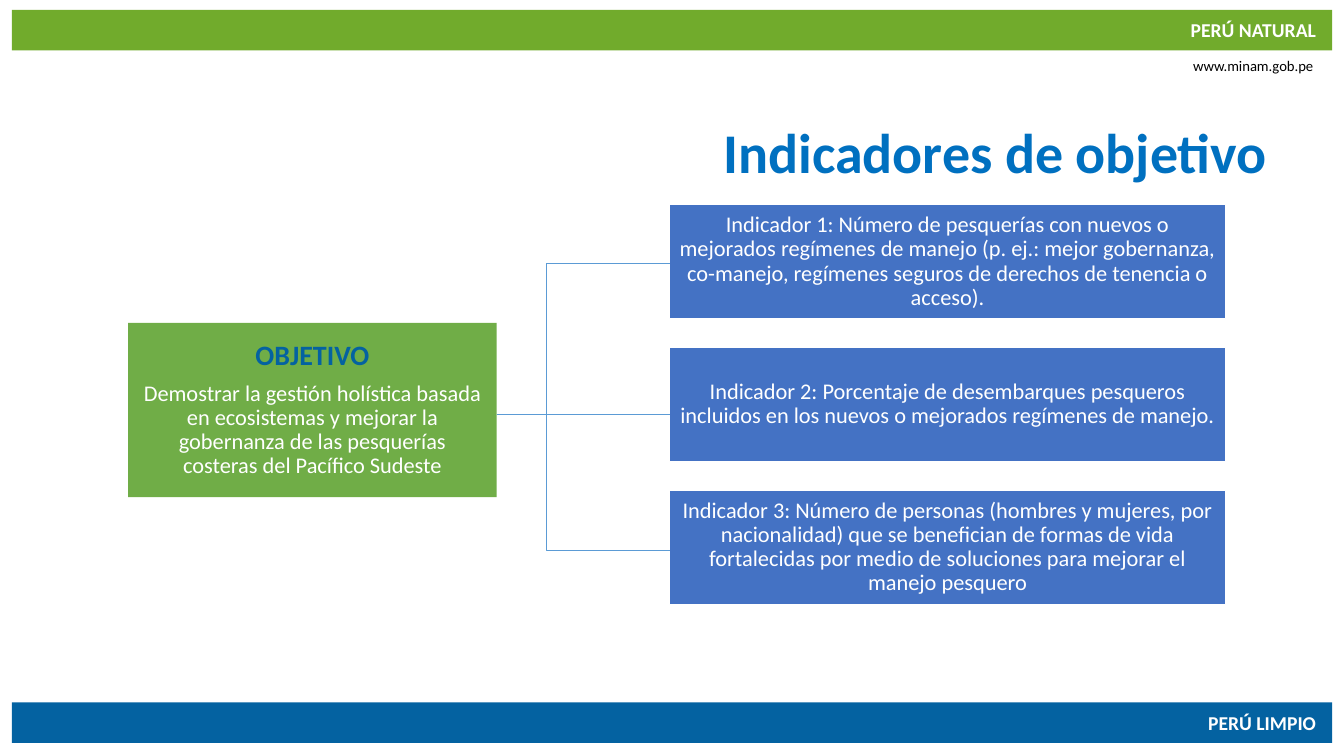
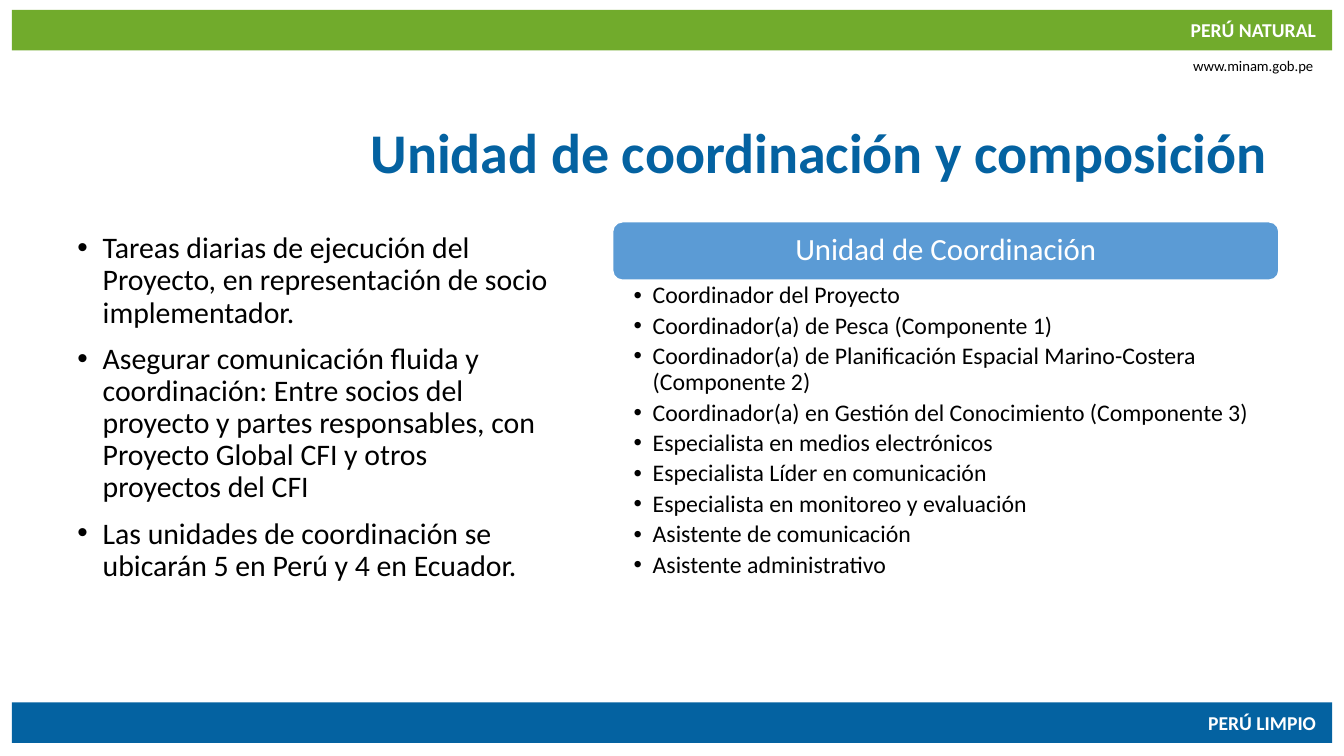
from dataclasses import dataclass
from typing import Optional

from lxml.etree import SubElement
from pptx import Presentation
from pptx.dml.color import RGBColor
from pptx.enum.shapes import MSO_CONNECTOR as Link, MSO_SHAPE as Preset
from pptx.enum.text import MSO_ANCHOR as Anchor, MSO_AUTO_SIZE as AutoSize, PP_ALIGN as Align
from pptx.oxml.ns import qn
from pptx.shapes.autoshape import Shape
from pptx.slide import Slide, SlideLayout
from pptx.text.text import TextFrame
from pptx.util import Cm, Pt

WHITE = RGBColor(0xFF, 0xFF, 0xFF)
BLACK = RGBColor(0x00, 0x00, 0x00)
BAND_GREEN = RGBColor(0x71, 0xAB, 0x2C)
BAND_BLUE = RGBColor(0x04, 0x62, 0xA1)
TITLE_BLUE = RGBColor(0x00, 0x70, 0xC0)
GOAL_GREEN = RGBColor(0x70, 0xAD, 0x47)
INDICATOR_BLUE = RGBColor(0x44, 0x72, 0xC4)
LIGHT_BLUE = RGBColor(0x5B, 0x9B, 0xD5)
FONT = "Calibri"
TITLE_ONLY = 5


@dataclass(frozen=True)
class Box:
    """Left, top, width and height in centimetres."""
    left: float
    top: float
    width: float
    height: float

    def lengths(self) -> tuple[Cm, Cm, Cm, Cm]:
        return Cm(self.left), Cm(self.top), Cm(self.width), Cm(self.height)


@dataclass(frozen=True)
class Style:
    size: float
    color: RGBColor = WHITE
    bold: bool = False
    align: Align = Align.CENTER
    line_spacing: float = 0.9
    gap: float = 0  # points between paragraphs
    bullet_indent: float = 0  # centimetres


@dataclass(frozen=True)
class Band:
    label: str
    top: float
    color: RGBColor


@dataclass(frozen=True)
class Indicator:
    text: str
    link_y: float


BANDS = (
    Band("PERÚ LIMPIO", 17.7, BAND_BLUE),
    Band("PERÚ NATURAL", 0.25, BAND_GREEN),
)
BAND_STYLE = Style(14, bold=True, align=Align.RIGHT, line_spacing=1)
ADDRESS_STYLE = Style(10.5, BLACK, align=Align.RIGHT, line_spacing=1)

GOAL_BOX = Box(3.23, 8.14, 9.29, 4.39)
GOAL_TEXT = (
    "Demostrar la gestión holística basada en ecosistemas y mejorar la "
    "gobernanza de las pesquerías costeras del Pacífico Sudeste"
)
INDICATORS = (
    Indicator(
        "Indicador 1: Número de pesquerías con nuevos o mejorados regímenes de manejo "
        "(p. ej.: mejor gobernanza, co-manejo, regímenes seguros de derechos de "
        "tenencia o acceso).", 6.63),
    Indicator(
        "Indicador 2: Porcentaje de desembarques pesqueros incluidos en los nuevos o "
        "mejorados regímenes de manejo.", 10.45),
    Indicator(
        "Indicador 3: Número de personas (hombres y mujeres, por nacionalidad) que se "
        "benefician de formas de vida fortalecidas por medio de soluciones para "
        "mejorar el manejo pesquero", 13.86),
)
INDICATOR_LEFT, INDICATOR_TOP, INDICATOR_PITCH = 16.88, 5.16, 3.6
BRANCH_X = 13.78

TASKS = (
    "Tareas diarias de ejecución del Proyecto, en representación de socio implementador.",
    "Asegurar comunicación fluida y coordinación: Entre socios del proyecto y partes "
    "responsables, con Proyecto Global CFI y otros proyectos del CFI",
    "Las unidades de coordinación se ubicarán 5 en Perú y 4 en Ecuador.",
)
ROLES = (
    "Coordinador del Proyecto",
    "Coordinador(a) de Pesca (Componente 1)",
    "Coordinador(a) de Planificación Espacial Marino-Costera (Componente 2)",
    "Coordinador(a) en Gestión del Conocimiento (Componente 3)",
    "Especialista en medios electrónicos",
    "Especialista Líder en comunicación",
    "Especialista en monitoreo y evaluación",
    "Asistente de comunicación",
    "Asistente administrativo",
)


def set_frame(frame: TextFrame, anchor: Anchor,
              insets: tuple[float, float, float, float]) -> None:
    frame.word_wrap = True
    frame.auto_size = AutoSize.NONE
    frame.vertical_anchor = anchor
    (frame.margin_left, frame.margin_top,
     frame.margin_right, frame.margin_bottom) = map(Cm, insets)


def write(frame: TextFrame, text: str, style: Style) -> None:
    """Fill the empty first paragraph, or add a further one after a gap."""
    first = not frame.paragraphs[0].runs
    paragraph = frame.paragraphs[0] if first else frame.add_paragraph()
    if style.bullet_indent:
        properties = paragraph._p.get_or_add_pPr()
        properties.set("marL", str(Cm(style.bullet_indent)))
        properties.set("indent", str(-Cm(style.bullet_indent)))
        SubElement(properties, qn("a:buFont")).set("typeface", "Arial")
        SubElement(properties, qn("a:buChar")).set("char", "•")
    paragraph.alignment = style.align
    paragraph.line_spacing = style.line_spacing
    if not first:
        paragraph.space_before = Pt(style.gap)
    run = paragraph.add_run()
    run.text = text
    run.font.name = FONT
    run.font.size = Pt(style.size)
    run.font.bold = style.bold
    run.font.color.rgb = style.color


def add_block(slide: Slide, box: Box, fill: RGBColor, preset: Preset = Preset.RECTANGLE,
              outline: Optional[RGBColor] = None, side_inset: float = 0.2) -> Shape:
    block = slide.shapes.add_shape(preset, *box.lengths())
    block.shadow.inherit = False
    block.fill.solid()
    block.fill.fore_color.rgb = fill
    if outline is None:
        block.line.fill.background()
    else:
        block.line.color.rgb = outline
        block.line.width = Pt(1)
    set_frame(block.text_frame, Anchor.MIDDLE, (side_inset, 0.03, side_inset, 0.03))
    return block


def add_text(slide: Slide, box: Box, texts: tuple[str, ...], style: Style,
             insets: tuple[float, float, float, float] = (0.25, 0.13, 0.25, 0.13)) -> Shape:
    area = slide.shapes.add_textbox(*box.lengths())
    set_frame(area.text_frame, Anchor.TOP, insets)
    for text in texts:
        write(area.text_frame, text, style)
    return area


def add_frame_to_layout(slide: Slide, layout: SlideLayout) -> None:
    """Draw the bands and web address, then hand them to the shared layout."""
    parts = []
    for band in BANDS:
        strip = add_block(slide, Box(0.3, band.top, 33.27, 1.02), band.color, side_inset=0.4)
        write(strip.text_frame, band.label, BAND_STYLE)
        parts.append(strip)
    parts.append(add_text(slide, Box(27, 1.3, 6.35, 0.71),
                          ("www.minam.gob.pe",), ADDRESS_STYLE))
    for part in parts:
        layout.shapes.element.append(part.element)


def set_title(slide: Slide, text: str, color: RGBColor) -> None:
    title = slide.shapes.title
    title.left, title.top, title.width, title.height = Box(1.7, 3.02, 30.48, 1.5).lengths()
    set_frame(title.text_frame, Anchor.TOP, (0.25, 0.13, 0.25, 0.13))
    write(title.text_frame, text, Style(40, color, bold=True, align=Align.RIGHT))


def add_branch(slide: Slide, start_x: float, start_y: float, end_x: float, end_y: float) -> None:
    """Link two points, bending at BRANCH_X when their heights differ."""
    bent = start_y != end_y
    branch = slide.shapes.add_connector(
        Link.ELBOW if bent else Link.STRAIGHT,
        Cm(start_x), Cm(start_y), Cm(end_x), Cm(end_y))
    branch.line.color.rgb = LIGHT_BLUE
    branch.line.width = Pt(0.5)
    properties = branch.element.spPr
    SubElement(properties, qn("a:effectLst"))
    if bent:
        bend = round((BRANCH_X - start_x) / (end_x - start_x) * 100000)
        guide = SubElement(properties.find(qn("a:prstGeom")).get_or_add_avLst(), qn("a:gd"))
        guide.set("name", "adj1")
        guide.set("fmla", f"val {bend}")


def build_indicators(slide: Slide) -> None:
    set_title(slide, "Indicadores de objetivo", TITLE_BLUE)
    goal = add_block(slide, GOAL_BOX, GOAL_GREEN, side_inset=0.3)
    write(goal.text_frame, "OBJETIVO", Style(20, BAND_BLUE, bold=True))
    write(goal.text_frame, GOAL_TEXT, Style(16, gap=7))
    goal_right = GOAL_BOX.left + GOAL_BOX.width
    trunk_y = INDICATORS[1].link_y
    for row, indicator in enumerate(INDICATORS):
        box = Box(INDICATOR_LEFT, INDICATOR_TOP + row * INDICATOR_PITCH, 14, 2.87)
        block = add_block(slide, box, INDICATOR_BLUE, outline=WHITE)
        write(block.text_frame, indicator.text, Style(16))
        add_branch(slide, goal_right, trunk_y, INDICATOR_LEFT, indicator.link_y)


def build_coordination(slide: Slide) -> None:
    set_title(slide, "Unidad de coordinación y composición", BAND_BLUE)
    add_text(slide, Box(1.7, 5.74, 12.47, 9.86), TASKS,
             Style(21.3, BLACK, align=Align.LEFT, gap=10, bullet_indent=0.64))
    header = add_block(slide, Box(15.44, 5.59, 16.79, 1.47), LIGHT_BLUE,
                       Preset.ROUNDED_RECTANGLE, outline=WHITE)
    write(header.text_frame, "Unidad de Coordinación", Style(22))
    add_text(slide, Box(15.44, 7.06, 16.79, 7.98), ROLES,
             Style(17, BLACK, align=Align.LEFT, gap=3.4, bullet_indent=0.48),
             (0.53, 0.08, 0.43, 0.08))


def main() -> None:
    deck = Presentation()
    deck.slide_width, deck.slide_height = Cm(33.87), Cm(19.05)
    layout = deck.slide_layouts[TITLE_ONLY]
    indicators = deck.slides.add_slide(layout)
    add_frame_to_layout(indicators, layout)
    build_indicators(indicators)
    build_coordination(deck.slides.add_slide(layout))
    deck.save("out.pptx")


if __name__ == "__main__":
    main()
